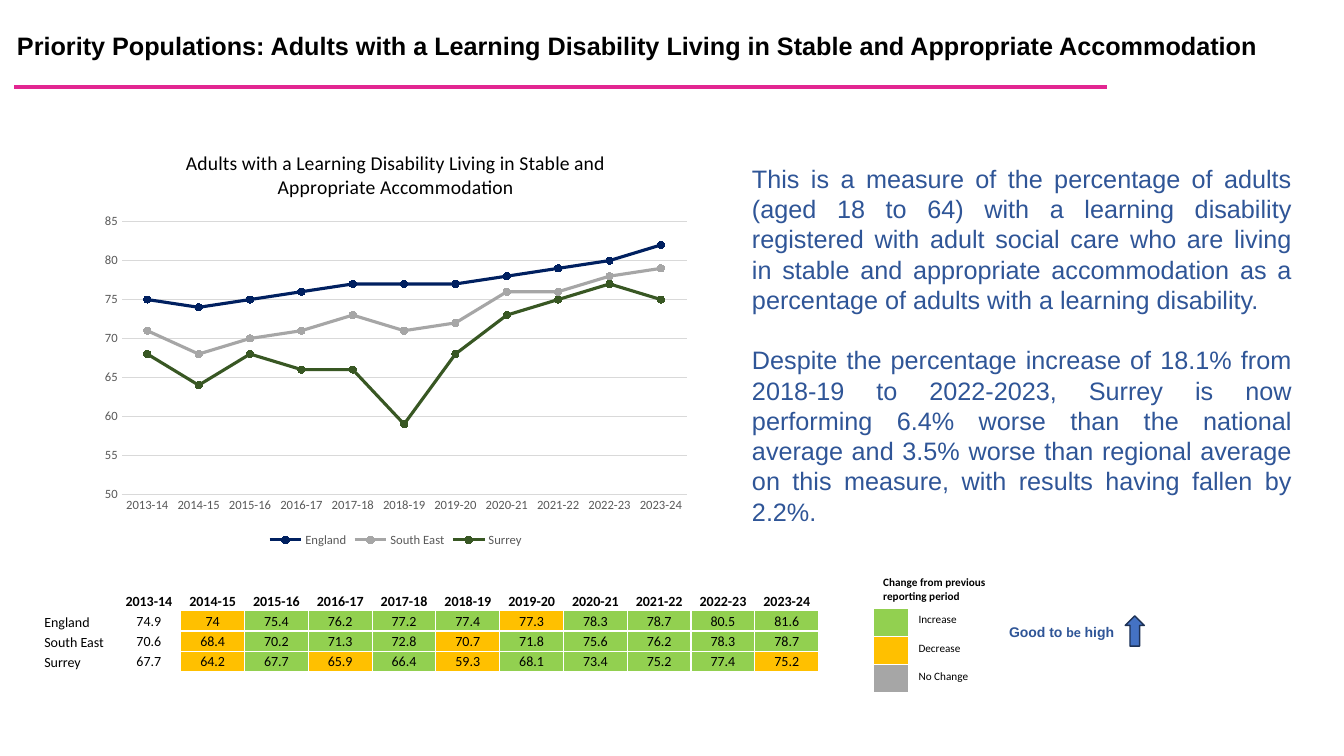
from pptx import Presentation
from pptx.chart.data import CategoryChartData
from pptx.dml.color import RGBColor
from pptx.enum.chart import XL_CHART_TYPE as ChartType, XL_LEGEND_POSITION as LegendPos
from pptx.enum.chart import XL_MARKER_STYLE as Marker, XL_TICK_MARK as Tick
from pptx.enum.shapes import MSO_CONNECTOR as Connector, MSO_SHAPE as Shape
from pptx.enum.text import MSO_ANCHOR as Anchor, PP_ALIGN as Align
from pptx.oxml import parse_xml
from pptx.oxml.ns import nsdecls
from pptx.util import Inches, Pt

BLACK = RGBColor(0x00, 0x00, 0x00)
WHITE = RGBColor(0xFF, 0xFF, 0xFF)
PINK = RGBColor(0xE2, 0x26, 0x91)
TEXT_BLUE = RGBColor(0x2F, 0x55, 0x97)
ARROW_BLUE = RGBColor(0x44, 0x72, 0xC4)
ARROW_EDGE = RGBColor(0x1E, 0x32, 0x56)
GREEN = RGBColor(0x92, 0xD0, 0x50)
AMBER = RGBColor(0xFF, 0xC0, 0x00)
GREY = RGBColor(0xA6, 0xA6, 0xA6)
NAVY = RGBColor(0x00, 0x20, 0x60)
DARK_GREEN = RGBColor(0x38, 0x57, 0x23)
AXIS_TEXT = RGBColor(0x59, 0x59, 0x59)
GRID = RGBColor(0xD9, 0xD9, 0xD9)

YEARS = [f"{year}-{(year + 1) % 100}" for year in range(2013, 2024)]
AREAS = {
    "England": (NAVY, [74.9, 74, 75.4, 76.2, 77.2, 77.4, 77.3, 78.3, 78.7, 80.5, 81.6]),
    "South East": (GREY, [70.6, 68.4, 70.2, 71.3, 72.8, 70.7, 71.8, 75.6, 76.2, 78.3, 78.7]),
    "Surrey": (DARK_GREEN, [67.7, 64.2, 67.7, 65.9, 66.4, 59.3, 68.1, 73.4, 75.2, 77.4, 75.2]),
}
CHANGES = {"Increase": GREEN, "Decrease": AMBER, "No Change": GREY}
HEADING = "Adults with a Learning Disability Living in Stable and Appropriate Accommodation"
MEASURE = (
    "This is a measure of the percentage of adults (aged 18 to 64) with a learning disability "
    "registered with adult social care who are living in stable and appropriate "
    "accommodation as a percentage of adults with a learning disability. "
)
FINDING = (
    "Despite the percentage increase of 18.1% from 2018-19 to 2022-2023, "
    "Surrey is now performing 6.4% worse than the national average and 3.5% worse than "
    "regional average on this measure, with results having fallen by 2.2%."
)


def set_font(font, size, color=BLACK, name="Calibri", bold=False):
    font.size, font.name, font.bold = Pt(size), name, bold
    font.color.rgb = color


def write(paragraph, text, size=10, align=Align.LEFT, before=0, spacing=None, **style):
    """Add formatted text to a paragraph."""
    paragraph.alignment = align
    if before:
        paragraph.space_before = Pt(before)
    if spacing:
        paragraph.line_spacing = spacing
    run = paragraph.add_run()
    run.text = text
    set_font(run.font, size, **style)


def change_color(previous, current):
    if current == previous:
        return GREY
    return GREEN if current > previous else AMBER


class SlideBuilder:
    """Draws styled elements on the current slide."""

    def __init__(self, slide):
        self.shapes = slide.shapes

    def text(self, box, paragraphs, anchor=Anchor.TOP, **style):
        frame = self.shapes.add_textbox(*map(Inches, box)).text_frame
        frame.word_wrap = True
        frame.vertical_anchor = anchor
        for index, text in enumerate(paragraphs):
            paragraph = frame.add_paragraph() if index else frame.paragraphs[0]
            write(paragraph, text, before=21.6 if index else 0, **style)
        return frame

    def rule(self, left, top, right, color, width):
        ends = map(Inches, (left, top, right, top))
        line = self.shapes.add_connector(Connector.STRAIGHT, *ends)
        line.line.color.rgb, line.line.width = color, Pt(width)
        line._element.spPr.append(parse_xml(f"<a:effectLst {nsdecls('a')}/>"))

    def arrow(self, box):
        arrow = self.shapes.add_shape(Shape.UP_ARROW, *map(Inches, box))
        arrow.shadow.inherit = False
        arrow.fill.solid()
        arrow.fill.fore_color.rgb = ARROW_BLUE
        arrow.line.color.rgb, arrow.line.width = ARROW_EDGE, Pt(1)

    def table(self, left, top, widths, heights):
        size = (left, top, sum(widths), sum(heights))
        frame = self.shapes.add_table(len(heights), len(widths), *map(Inches, size))
        table = frame.table
        table.first_row = table.horz_banding = False
        for column, width in zip(table.columns, widths):
            column.width = Inches(width)
        for row, height in zip(table.rows, heights):
            row.height = Inches(height)
        for cell in table.iter_cells():
            self.cell(cell)
        return table

    def cell(self, cell):
        cell.fill.background()
        properties = cell._tc.get_or_add_tcPr()
        for index, side in enumerate(("lnL", "lnR", "lnT", "lnB")):
            properties.insert(index, parse_xml(
                f'<a:{side} {nsdecls("a")} w="12700"><a:solidFill>'
                f'<a:srgbClr val="{WHITE}"/></a:solidFill></a:{side}>'))
        cell.text_frame.paragraphs[0]._p.append(
            parse_xml(f'<a:endParaRPr {nsdecls("a")} sz="800"/>'))

    def fill(self, cell, color):
        cell.fill.solid()
        cell.fill.fore_color.rgb = color

    def value_cell(self, cell, text, anchor=Anchor.MIDDLE, **style):
        self.tighten(cell)
        cell.vertical_anchor = anchor
        write(cell.text_frame.paragraphs[0], text, **style)

    def tighten(self, cell):
        cell.margin_left = cell.margin_top = cell.margin_right = Inches(0.01)
        cell.margin_bottom = 0

    def line_chart(self, box, title, categories, series):
        data = CategoryChartData(number_format="General")
        data.categories = categories
        for name, (_, values) in series.items():
            data.add_series(name, [round(value) for value in values])
        chart = self.shapes.add_chart(ChartType.LINE_MARKERS, *map(Inches, box), data).chart
        set_font(chart.font, 10)
        write(chart.chart_title.text_frame.paragraphs[0], title, size=14, align=Align.CENTER)
        chart.chart_title.include_in_layout = False
        chart.has_legend = True
        chart.legend.position = LegendPos.BOTTOM
        chart.legend.include_in_layout = False
        set_font(chart.legend.font, 9, AXIS_TEXT)

        years, percent = chart.category_axis, chart.value_axis
        for axis in (years, percent):
            axis.major_tick_mark = axis.minor_tick_mark = Tick.NONE
            set_font(axis.tick_labels.font, 9, AXIS_TEXT)
        percent.minimum_scale, percent.maximum_scale, percent.major_unit = 50, 85, 5
        percent.format.line.fill.background()
        for line in (years.format.line, percent.major_gridlines.format.line):
            line.color.rgb, line.width = GRID, Pt(0.75)

        plot = chart.plots[0]
        plot.vary_by_categories = False
        for drawn, (color, _) in zip(plot.series, series.values()):
            drawn.smooth = False
            drawn.format.line.color.rgb, drawn.format.line.width = color, Pt(2.25)
            drawn.marker.style, drawn.marker.size = Marker.CIRCLE, 5
            drawn.marker.format.fill.solid()
            drawn.marker.format.fill.fore_color.rgb = color
            drawn.marker.format.line.color.rgb = color


def main():
    deck = Presentation()
    deck.slide_width, deck.slide_height = Inches(13.33), Inches(7.5)
    page = SlideBuilder(deck.slides.add_slide(deck.slide_layouts[6]))

    key = page.table(8.66, 5.66, [0.35, 1.24], [0.34] + [0.28] * 3)
    key.cell(0, 0).merge(key.cell(0, 1))
    write(key.cell(0, 0).text_frame.paragraphs[0],
          "Change from previous reporting period", size=8, bold=True)
    for row, (label, color) in enumerate(CHANGES.items(), 1):
        page.fill(key.cell(row, 0), color)
        write(key.cell(row, 1).text_frame.paragraphs[0], label, size=8)

    page.text((7.36, 1.57, 5.55, 3.74), [MEASURE, FINDING], size=18,
              align=Align.JUSTIFY, color=TEXT_BLUE, name="Arial")
    page.rule(0.14, 0.86, 10.98, PINK, 3)
    page.text((0.07, 0.04, 13.19, 0.86), [f"Priority Populations: {HEADING}"],
              anchor=Anchor.MIDDLE, size=18, spacing=0.9, name="Arial", bold=True)
    target = page.text((9.91, 6.14, 2.33, 0.27), ["Good to "],
                       color=TEXT_BLUE, name="Arial", bold=True)
    for words, font in (("be", "Calibri"), (" high", "Arial")):
        write(target.paragraphs[0], words, color=TEXT_BLUE, name=font, bold=True)
    page.arrow((11.16, 6.11, 0.19, 0.3))

    results = page.table(0.43, 5.86, [0.73] + [6.96 / len(YEARS)] * len(YEARS),
                         [0.2] * (len(AREAS) + 1))
    page.tighten(results.cell(0, 0))
    for column, year in enumerate(YEARS, 1):
        page.value_cell(results.cell(0, column), year, align=Align.CENTER, bold=True)
    for row, (area, (_, values)) in enumerate(AREAS.items(), 1):
        page.value_cell(results.cell(row, 0), area, anchor=Anchor.BOTTOM)
        for column, value in enumerate(values, 1):
            cell = results.cell(row, column)
            page.value_cell(cell, str(value), align=Align.CENTER)
            if column > 1:
                page.fill(cell, change_color(values[column - 2], value))

    page.line_chart((0.92, 1.31, 6.01, 4.16), HEADING, YEARS, AREAS)
    deck.save("out.pptx")


if __name__ == "__main__":
    main()
